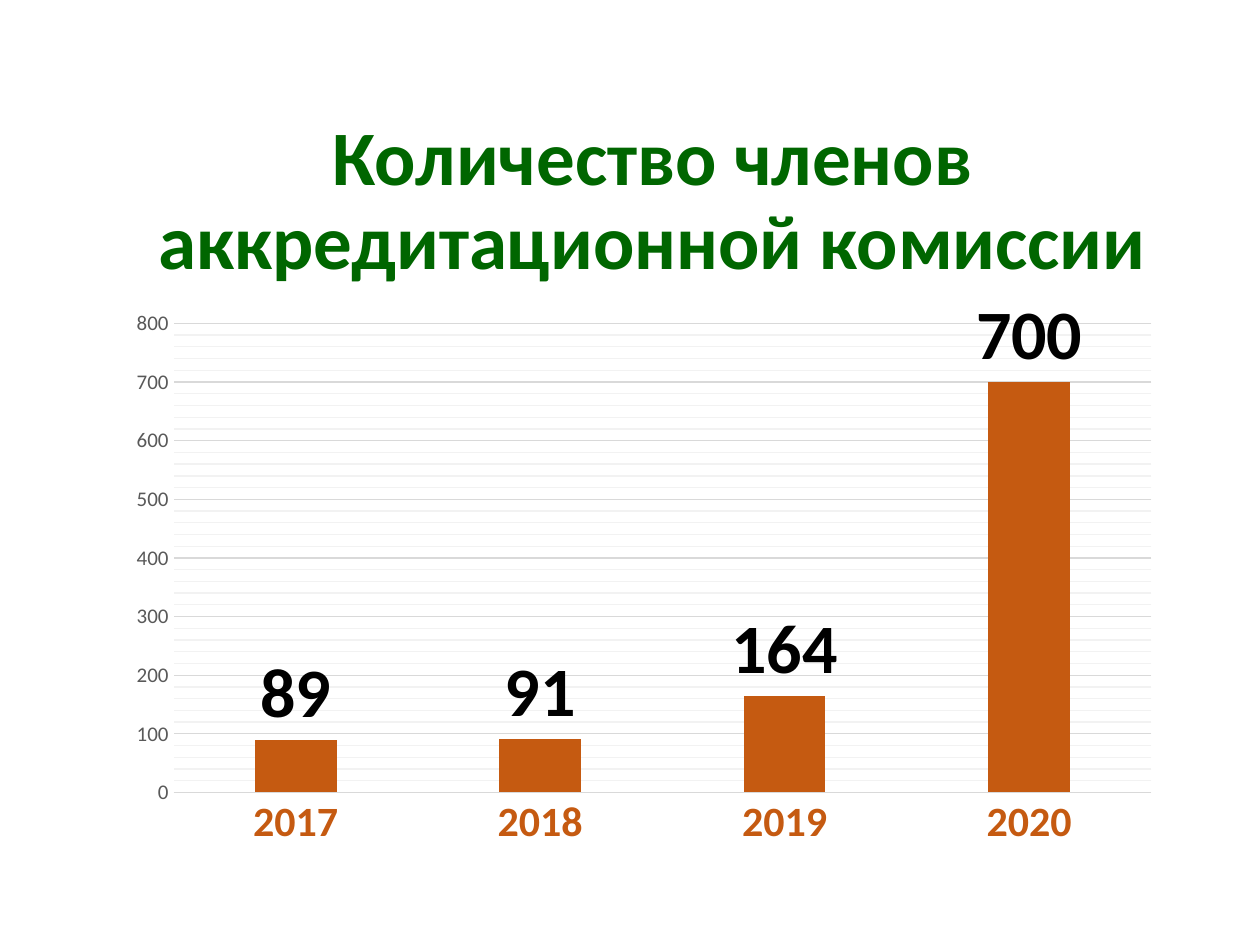
import copy

import pptx
import pptx.chart.data
import pptx.dml.color
import pptx.enum.chart
import pptx.enum.text
import pptx.oxml.ns
import pptx.util

Pt = pptx.util.Pt


def color(value):
    return pptx.dml.color.RGBColor.from_string(value)


class SlideBuilder:
    typeface = "Calibri"
    green = "006600"
    orange = "C55A11"
    black = "000000"
    gray = "595959"
    grid = "D9D9D9"
    minor_grid = "F2F2F2"

    def __init__(self, slide):
        self.slide = slide

    def style_font(self, font, size, fill, bold=False):
        font.name = self.typeface
        font.size = Pt(size)
        font.bold = bold
        font.color.rgb = color(fill)

    def style_line(self, line, fill):
        line.color.rgb = color(fill)
        line.width = Pt(0.75)

    def add_title(self, lines, left, top, width, height):
        title = self.slide.shapes.title
        title.left, title.top = Pt(left), Pt(top)
        title.width, title.height = Pt(width), Pt(height)
        frame = title.text_frame
        frame.word_wrap = True
        frame.auto_size = pptx.enum.text.MSO_AUTO_SIZE.NONE
        frame.vertical_anchor = pptx.enum.text.MSO_ANCHOR.MIDDLE
        heading = frame.paragraphs[0]
        heading.alignment = pptx.enum.text.PP_ALIGN.CENTER
        heading.line_spacing = 0.9
        for index, line in enumerate(lines):
            if index:
                heading.add_line_break()
            run = heading.add_run()
            run.text = line
            self.style_font(run.font, 44, self.green, True)

    def add_column_chart(self, members_by_year, left, top, width, height):
        members = pptx.chart.data.CategoryChartData()
        members.categories = list(members_by_year)
        members.add_series("Series 1", list(members_by_year.values()))
        chart = self.slide.shapes.add_chart(
            pptx.enum.chart.XL_CHART_TYPE.COLUMN_CLUSTERED,
            Pt(left), Pt(top), Pt(width), Pt(height), members).chart
        chart.has_legend = False
        chart.has_title = False
        self.style_font(chart.font, 10, self.black)
        self.style_axes(chart.category_axis, chart.value_axis)
        self.style_columns(chart.plots[0])

    def style_axes(self, years, counts):
        for axis in (years, counts):
            axis.major_tick_mark = pptx.enum.chart.XL_TICK_MARK.NONE
            axis.minor_tick_mark = pptx.enum.chart.XL_TICK_MARK.NONE
        self.style_font(years.tick_labels.font, 24, self.orange, True)
        self.style_line(years.format.line, self.grid)
        self.style_font(counts.tick_labels.font, 12, self.gray)
        counts.format.line.fill.background()
        counts.minimum_scale, counts.maximum_scale = 0, 800
        counts.major_unit, counts.minor_unit = 100, 20
        self.style_gridlines(counts)

    def style_gridlines(self, axis):
        axis.has_major_gridlines = True
        axis.has_minor_gridlines = True
        major_line = axis.major_gridlines.format.line
        self.style_line(major_line, self.minor_grid)
        qn = pptx.oxml.ns.qn
        major = axis._element.find(qn("c:majorGridlines"))
        minor = axis._element.find(qn("c:minorGridlines"))
        minor.append(copy.deepcopy(major.find(qn("c:spPr"))))
        self.style_line(major_line, self.grid)

    def style_columns(self, plot):
        plot.gap_width = 199
        plot.vary_by_categories = False
        columns = plot.series[0]
        columns.format.fill.solid()
        columns.format.fill.fore_color.rgb = color(self.orange)
        labels = columns.data_labels
        labels.show_value = True
        labels.position = pptx.enum.chart.XL_LABEL_POSITION.OUTSIDE_END
        self.style_font(labels.font, 40, self.black, True)


def main():
    presentation = pptx.Presentation()
    presentation.slide_width = Pt(720)
    presentation.slide_height = Pt(540)
    title_only = presentation.slide_layouts[5]
    builder = SlideBuilder(presentation.slides.add_slide(title_only))
    builder.add_title(["Количество членов", "аккредитационной комиссии"],
                      66, 63.5, 614, 104.5)
    builder.add_column_chart({"2017": 89, "2018": 91, "2019": 164, "2020": 700},
                             66, 168, 604, 323)
    presentation.save("out.pptx")


if __name__ == "__main__":
    main()
